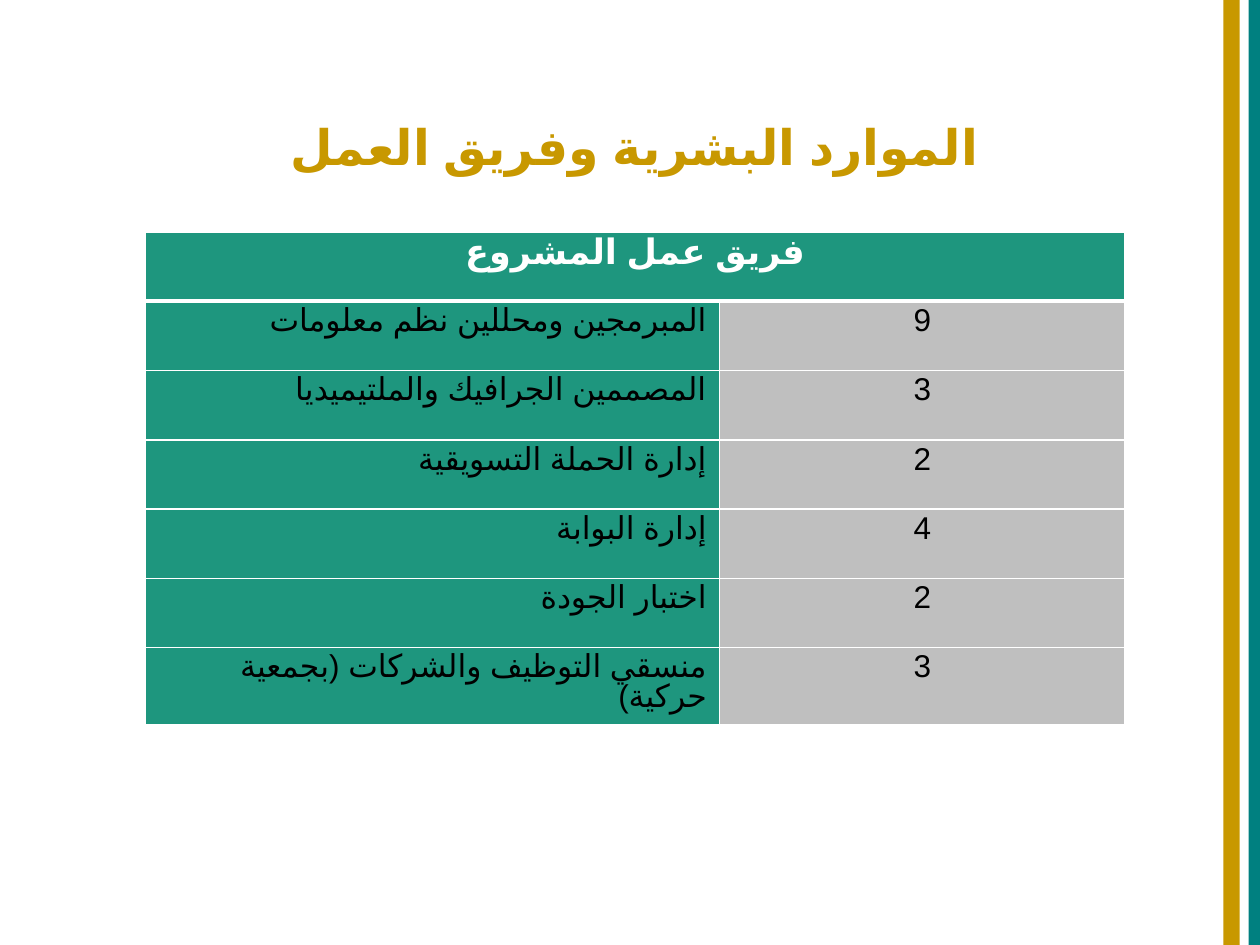
from dataclasses import dataclass

from pptx import Presentation
from pptx.dml.color import RGBColor
from pptx.enum.lang import MSO_LANGUAGE_ID as Lang
from pptx.enum.shapes import MSO_SHAPE as Shape
from pptx.enum.text import MSO_ANCHOR as Anchor, PP_ALIGN as Align
from pptx.oxml.ns import qn
from pptx.util import Inches, Pt
from lxml.etree import SubElement as Sub


@dataclass(frozen=True)
class Theme:
    font: str = "Arial"
    gold: str = "C89800"
    teal: str = "008080"
    green: str = "1E967E"
    gray: str = "BFBFBF"
    white: str = "FFFFFF"
    black: str = "000000"
    title: int = 28
    head: int = 20
    body: int = 18


def rgb(code):
    return RGBColor.from_string(code)


def write(frame, text, font, size, color, bold=False, align=Align.CENTER, gap=None):
    """Fill a frame with one right-to-left Arabic paragraph."""
    para = frame.paragraphs[0]
    para.alignment = align
    para.line_spacing = gap
    para._p.get_or_add_pPr().set("rtl", "1")
    run = para.add_run()
    run.text = text
    run.font.name = font
    run.font.size = Pt(size)
    run.font.bold = bold
    run.font.language_id = Lang.ARABIC
    run.font.color.rgb = rgb(color)
    Sub(run._r.get_or_add_rPr(), qn("a:cs"), typeface=font)


def edge(cell, color, **widths):
    """Draw cell borders; widths are points by side: L, R, T, B."""
    props = cell._tc.get_or_add_tcPr()
    for side, width in widths.items():
        line = Sub(props, qn(f"a:ln{side}"), w=str(Pt(width)))
        Sub(Sub(line, qn("a:solidFill")), qn("a:srgbClr"), val=color)


class Page:
    def __init__(self, slide, theme):
        self.slide = slide
        self.theme = theme

    def title(self, text, *box):
        look = self.theme
        frame = self.slide.shapes.add_textbox(*map(Inches, box)).text_frame
        frame.word_wrap = True
        frame.vertical_anchor = Anchor.MIDDLE
        write(frame, text, look.font, look.title, look.gold, bold=True)

    def bar(self, color, *box):
        shape = self.slide.shapes.add_shape(Shape.RECTANGLE, *map(Inches, box))
        shape.shadow.inherit = False
        shape.fill.solid()
        shape.fill.fore_color.rgb = rgb(color)
        shape.line.fill.background()

    def cell(self, cell, text, fill, top=1, low=1, **style):
        edge(cell, self.theme.white, L=1, R=1, T=top, B=low)
        cell.fill.solid()
        cell.fill.fore_color.rgb = rgb(fill)
        write(cell.text_frame, text, self.theme.font, gap=0.85, **style)

    def table(self, head, rows, left, top, widths, high):
        look = self.theme
        count = len(rows) + 1
        grid = self.slide.shapes.add_table(
            count, len(widths), Inches(left), Inches(top),
            Inches(sum(widths)), Inches(high * count)).table
        for col, width in zip(grid.columns, widths):
            col.width = Inches(width)
        for row in grid.rows:
            row.height = Inches(high)
        grid.cell(0, 0).merge(grid.cell(0, 1))
        self.cell(grid.cell(0, 0), head, look.green, low=3,
                  size=look.head, color=look.white, bold=True)
        edge(grid.cell(0, 1), look.white, L=1, R=1, T=1, B=3)
        for i, (role, staff) in enumerate(rows, 1):
            lid = 3 if i == 1 else 1
            style = dict(top=lid, size=look.body, color=look.black)
            self.cell(grid.cell(i, 0), role, look.green, align=Align.RIGHT, **style)
            self.cell(grid.cell(i, 1), str(staff), look.gray, **style)


TEAM = [
    ("المبرمجين ومحللين نظم معلومات", 9),
    ("المصممين الجرافيك والملتيميديا", 3),
    ("إدارة الحملة التسويقية", 2),
    ("إدارة البوابة", 4),
    ("اختبار الجودة", 2),
    ("منسقي التوظيف والشركات (بجمعية حركية)", 3),
]


def main():
    deck = Presentation()
    deck.slide_width, deck.slide_height = Inches(10), Inches(7.5)
    theme = Theme()
    page = Page(deck.slides.add_slide(deck.slide_layouts[6]), theme)
    page.title("الموارد البشرية وفريق العمل", 0.35, 0.53, 9.37, 1.25)
    page.table("فريق عمل المشروع", TEAM, 1.15, 1.84, (4.56, 3.22), 0.55)
    for color, left in ((theme.teal, 9.91), (theme.gold, 9.71)):
        page.bar(color, left, -0.02, 0.13, 7.6)
    deck.save("out.pptx")


if __name__ == "__main__":
    main()
